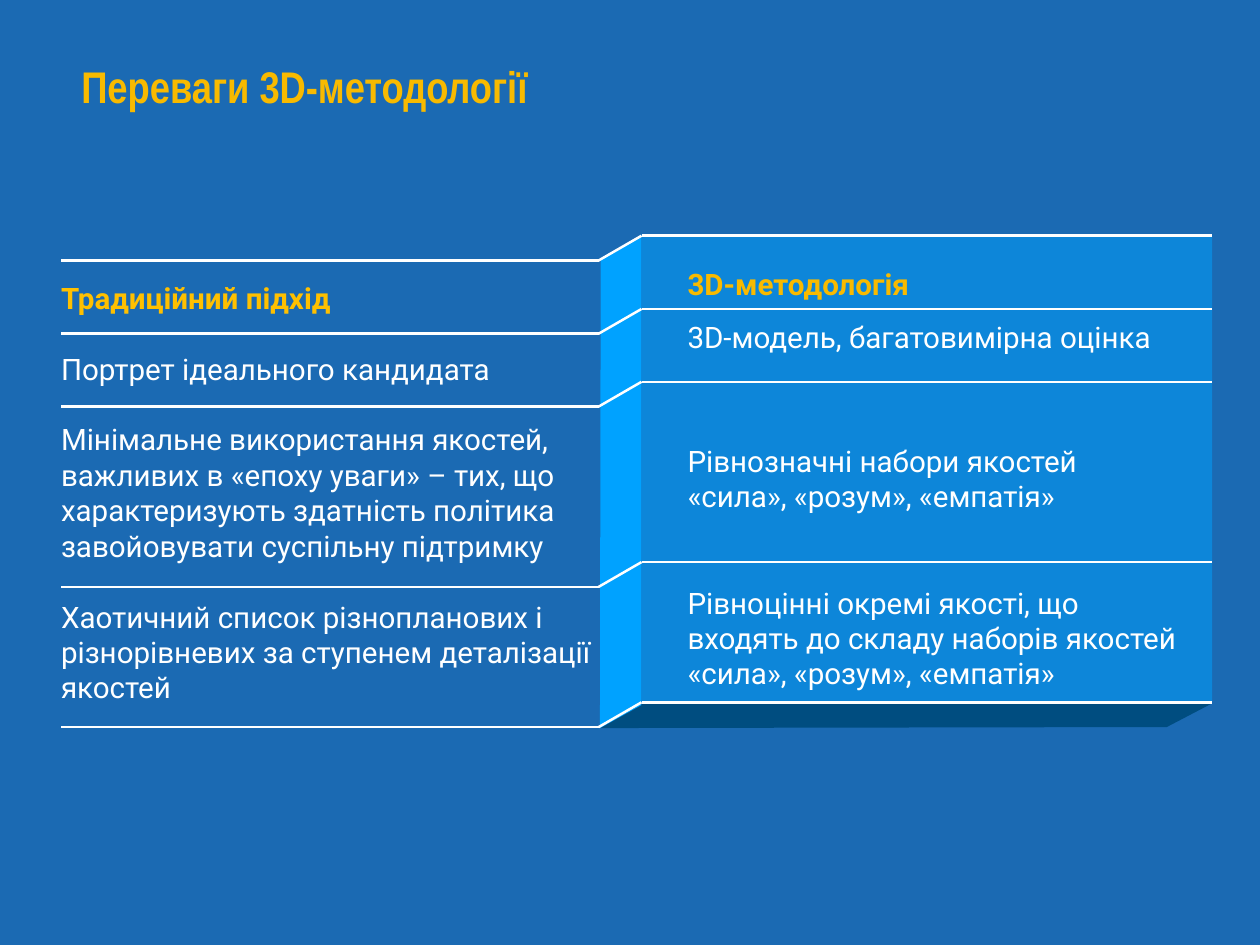
from dataclasses import dataclass

import pptx
import pptx.dml.color
import pptx.enum.shapes
import pptx.enum.text
import pptx.oxml.ns
import pptx.util
from lxml import etree
from pptx.util import Cm, Pt

WHITE, GOLD, AMBER = "FFFFFF", "F8BA00", "FFC000"
BACKGROUND, PANEL_BLUE, BASE_BLUE = "1B6AB3", "00A2FF", "004D80"

# Panel geometry in centimetres
TABLE_LEFT, FOLD_LEFT, PANEL_LEFT, PANEL_RIGHT = 1.75, 17.16, 18.39, 34.75
RULES = [6.76, 8.86, 10.95, 16.12, 20.14]
DEPTH = 0.71
INSET = 0.15


@dataclass
class Entry:
    text: str
    space_before: float = 0
    color: str = WHITE
    bold: bool = False


@dataclass
class Column:
    left: float
    top: float
    width: float
    height: float
    entries: list[Entry]


@dataclass
class Face:
    points: list[tuple[float, float]]
    color: str


LINE = 28.8  # height of one text line in points

COLUMNS = [
    Column(1.6, 7.87, 16.92, 12.6, [
        Entry("Традиційний підхід", color=AMBER, bold=True),
        Entry("Портрет ідеального кандидата", LINE),
        Entry("Мінімальне використання якостей, важливих в «епоху уваги» – тих, що "
              "характеризують здатність політика завойовувати суспільну підтримку", LINE),
        Entry("Хаотичний список різнопланових і різнорівневих за ступенем "
              "деталізації якостей", LINE),
    ]),
    Column(19.56, 7.47, 14.43, 12.6, [
        Entry("3D-методологія", color=GOLD, bold=True),
        Entry("3D-модель, багатовимірна оцінка", LINE / 2),
        Entry("Рівнозначні набори якостей «сила», «розум», «емпатія»", LINE * 2.5),
        Entry("Рівноцінні окремі якості, що входять до складу наборів якостей "
              "«сила», «розум», «емпатія»", LINE * 2),
    ]),
]

FACES = [
    Face([(17.22, 20.88), (18.44, 20.14), (34.75, 20.17), (33.45, 20.85)], BASE_BLUE),
    Face([(17.22, 7.47), (18.39, 6.73), (18.39, 20.22), (17.2, 20.88)], PANEL_BLUE),
]


def rgb(value: str) -> pptx.dml.color.RGBColor:
    return pptx.dml.color.RGBColor.from_string(value)


def paint(shape, color: str) -> None:
    shape.shadow.inherit = False
    shape.fill.solid()
    shape.fill.fore_color.rgb = rgb(color)
    shape.line.fill.background()


def add_face(slide, face: Face) -> None:
    corners = [(Cm(x), Cm(y)) for x, y in face.points]
    builder = slide.shapes.build_freeform(*corners[0], scale=1.0)
    builder.add_line_segments(corners[1:], close=True)
    paint(builder.convert_to_shape(), face.color)


def add_front_panel(slide) -> None:
    panel = slide.shapes.add_shape(
        pptx.enum.shapes.MSO_SHAPE.RECTANGLE, Cm(PANEL_LEFT), Cm(RULES[0]),
        Cm(PANEL_RIGHT - PANEL_LEFT), Cm(RULES[-1] - RULES[0]))
    paint(panel, PANEL_BLUE)
    qn = pptx.oxml.ns.qn
    color = panel.fill._xPr.find(qn("a:solidFill")).find(qn("a:srgbClr"))
    etree.SubElement(color, qn("a:alpha"), val="50000")


def add_rule(slide, x1: float, y1: float, x2: float, y2: float) -> None:
    rule = slide.shapes.add_connector(
        pptx.enum.shapes.MSO_CONNECTOR.STRAIGHT, Cm(x1), Cm(y1), Cm(x2), Cm(y2))
    rule.line.color.rgb = rgb(WHITE)
    rule.line.width = Pt(2)
    etree.SubElement(rule._element.spPr, pptx.oxml.ns.qn("a:effectLst"))


def set_frame(frame) -> None:
    frame.word_wrap = True
    frame.auto_size = pptx.enum.text.MSO_AUTO_SIZE.SHAPE_TO_FIT_TEXT
    frame.vertical_anchor = pptx.enum.text.MSO_ANCHOR.TOP
    frame.margin_left = frame.margin_right = Cm(INSET)
    frame.margin_top = frame.margin_bottom = Cm(INSET)


def add_run(paragraph, text: str, font: str, size: float, color: str, bold: bool) -> None:
    paragraph.alignment = pptx.enum.text.PP_ALIGN.LEFT
    run = paragraph.add_run()
    run.text = text
    run.font.name = font
    run.font.size = Pt(size)
    run.font.bold = bold
    run.font.color.rgb = rgb(color)


def add_column(slide, column: Column) -> None:
    frame = slide.shapes.add_textbox(
        Cm(column.left), Cm(column.top), Cm(column.width), Cm(column.height)).text_frame
    set_frame(frame)
    for index, entry in enumerate(column.entries):
        paragraph = frame.add_paragraph() if index else frame.paragraphs[0]
        if index:
            paragraph.space_before = Pt(entry.space_before)
        add_run(paragraph, entry.text, "Roboto", 24, entry.color, entry.bold)


def set_title(slide, text: str) -> None:
    title = slide.shapes.title
    title.left, title.top = Cm(2.18), Cm(1.55)
    title.width, title.height = Cm(27.71), Cm(1.83)
    set_frame(title.text_frame)
    add_run(title.text_frame.paragraphs[0], text, "Arial Narrow", 36, GOLD, True)


def main() -> None:
    deck = pptx.Presentation()
    deck.slide_width, deck.slide_height = Cm(36.12), Cm(27.1)
    slide = deck.slides.add_slide(deck.slide_layouts[5])
    slide.background.fill.solid()
    slide.background.fill.fore_color.rgb = rgb(BACKGROUND)

    # Folded panel
    for face in FACES:
        add_face(slide, face)
    add_front_panel(slide)

    # Title and the two compared approaches
    set_title(slide, "Переваги 3D-методології")
    for column in COLUMNS:
        add_column(slide, column)

    # Row rules: right panel, left side, and the slanted fold between them
    for y in RULES:
        add_rule(slide, PANEL_LEFT, y, PANEL_RIGHT, y)
        add_rule(slide, TABLE_LEFT, y + DEPTH, FOLD_LEFT, y + DEPTH)
        add_rule(slide, FOLD_LEFT, y + DEPTH, PANEL_LEFT, y)

    deck.save("out.pptx")


if __name__ == "__main__":
    main()
